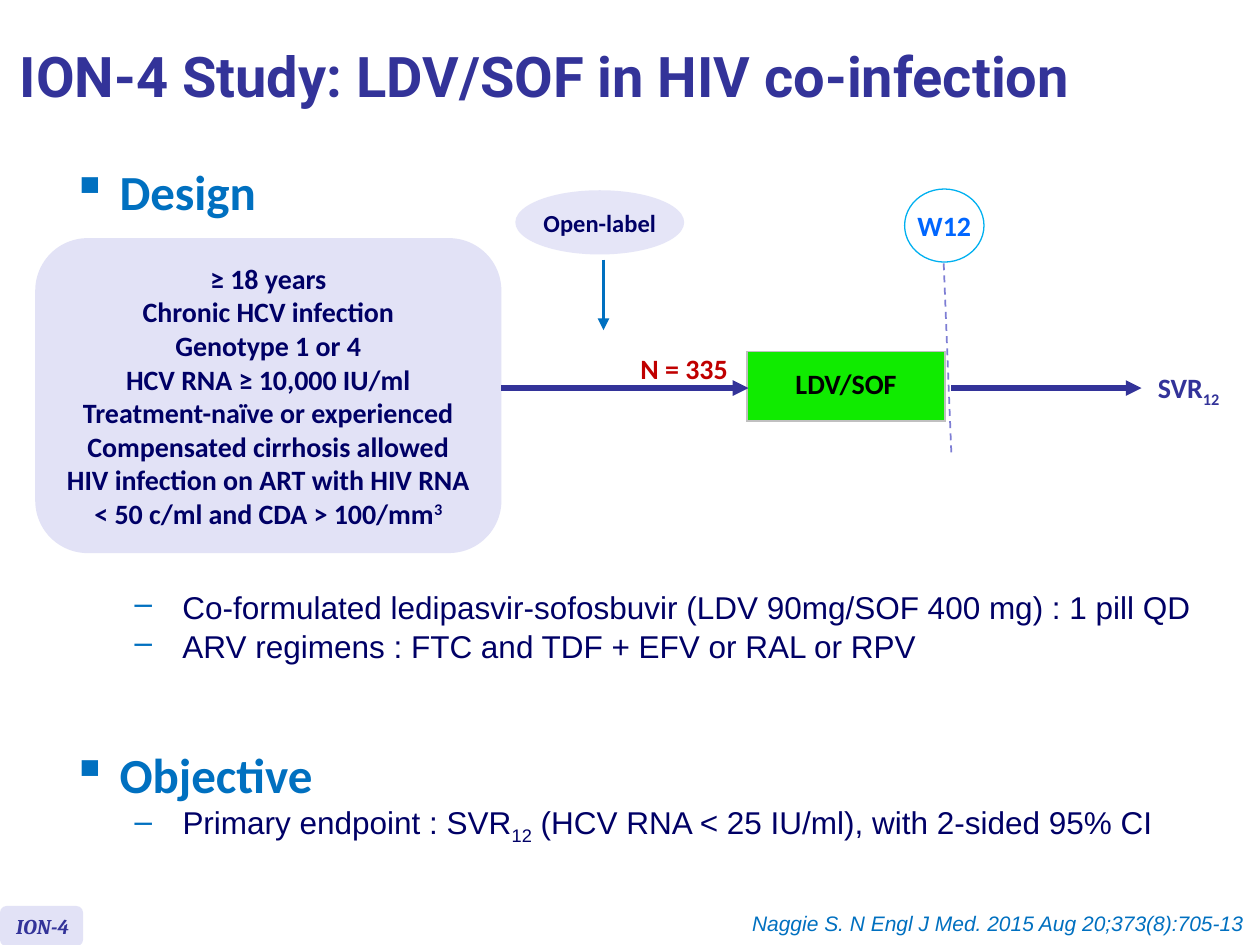
from lxml import etree
from pptx import Presentation
from pptx import util as u
from pptx.dml.color import RGBColor
from pptx.enum import dml, shapes, text
from pptx.oxml import parse_xml
from pptx.oxml.ns import nsdecls, qn

# Content: a paragraph is a list of (text, baseline shift in %) runs
TITLE = "ION-4 Study: LDV/SOF in HIV co-infection"
BADGE = "ION-4"
CITATION = "Naggie S. N Engl J Med. 2015 Aug 20;373(8):705-13"
CRITERIA = [
    "≥ 18 years",
    "Chronic HCV infection",
    "Genotype 1 or 4",
    "HCV RNA ≥ 10,000 IU/ml",
    "Treatment-naïve or experienced",
    "Compensated cirrhosis allowed",
    [("HIV infection on ART with HIV RNA < 50 c/ml and CDA > 100/mm", 0), ("3", 30)],
]
REGIMENS = [
    "Co-formulated ledipasvir-sofosbuvir (LDV 90mg/SOF 400 mg) : 1 pill QD",
    "ARV regimens : FTC and TDF + EFV or RAL or RPV",
]
ENDPOINT = [("Primary endpoint : SVR", 0), ("12", -25),
            (" (HCV RNA < 25 IU/ml), with 2-sided 95% CI", 0)]
OUTCOME = [("SVR", 0), ("12", -25)]

INDIGO, NAVY, BLUE, LILAC = "333399", "000066", "0070C0", "E2E2F6"
LEFT, CENTER, RIGHT = text.PP_ALIGN.LEFT, text.PP_ALIGN.CENTER, text.PP_ALIGN.RIGHT
HEADING = dict(size=28, color=BLUE, bullet="▪", indent=0.38)
DETAIL = dict(size=18, color=NAVY, font="Arial", bold=False, bullet="–")

prs = Presentation()
prs.slide_width, prs.slide_height = u.Inches(10), u.Inches(7.5)
slide = prs.slides.add_slide(prs.slide_layouts[6])


def rgb(color):
    return RGBColor.from_string(color)


def inches(*lengths):
    return [u.Inches(n) for n in lengths]


def write(paragraph, runs, size, color, font="Calibri", bold=True, italic=False,
          align=LEFT, bullet=None, indent=0.0, before=0):
    if bullet:
        props = paragraph._p.get_or_add_pPr()
        props.set("marL", str(u.Inches(indent)))
        props.set("indent", str(-u.Inches(0.38)))
        props.append(parse_xml(f'<a:buClr {nsdecls("a")}><a:srgbClr val="{BLUE}"/></a:buClr>'))
        props.append(parse_xml(f'<a:buChar {nsdecls("a")} char="{bullet}"/>'))
    paragraph.alignment = align
    if before:
        paragraph.space_before = u.Pt(before)
    for words, baseline in [(runs, 0)] if isinstance(runs, str) else runs:
        run = paragraph.add_run()
        run.text = words
        run.font.name, run.font.size = font, u.Pt(size)
        run.font.bold, run.font.italic = bold, italic
        run.font.color.rgb = rgb(color)
        if baseline:
            run._r.get_or_add_rPr().set("baseline", str(baseline * 1000))


def fill_frame(frame, lines, wrap=True, anchor=text.MSO_ANCHOR.TOP):
    """Each line is (runs, style)."""
    frame.word_wrap, frame.vertical_anchor = wrap, anchor
    for i, (runs, style) in enumerate(lines):
        write(frame.add_paragraph() if i else frame.paragraphs[0], runs, **style)
    return frame


def label(box, lines, **options):
    return fill_frame(slide.shapes.add_textbox(*inches(*box)).text_frame, lines, **options)


def panel(kind, box, fill, lines=(), line=None, wrap=True):
    shape = slide.shapes.add_shape(kind, *inches(*box))
    shape.shadow.inherit = False
    shape.fill.solid()
    shape.fill.fore_color.rgb = rgb(fill)
    if line:
        shape.line.color.rgb, shape.line.width = rgb(line), u.Pt(0.75)
    else:
        shape.line.fill.background()
    fill_frame(shape.text_frame, lines, wrap, text.MSO_ANCHOR.MIDDLE)
    return shape


def connect(start, end, color, width, arrow=True):
    line = slide.shapes.add_connector(shapes.MSO_CONNECTOR.STRAIGHT, *inches(*start, *end))
    line.line.color.rgb, line.line.width = rgb(color), u.Pt(width)
    if arrow:
        etree.SubElement(line.line._get_or_add_ln(), qn("a:tailEnd"), type="triangle")
    else:
        line.line.dash_style = dml.MSO_LINE.DASH
    etree.SubElement(line._element.spPr, qn("a:effectLst"))


ROUND, OVAL = shapes.MSO_SHAPE.ROUNDED_RECTANGLE, shapes.MSO_SHAPE.OVAL
FLOW_Y = 3.08      # height of the study's time line
WEEK_12 = 7.55     # end of treatment

# Title, badge and citation
label((0.06, 0.03, 9.83, 1.21), [(TITLE, dict(size=32, color=INDIGO, font="Roboto"))],
      anchor=text.MSO_ANCHOR.MIDDLE).paragraphs[0].line_spacing = 0.85
panel(ROUND, (0, 7.19, 0.66, 0.32), LILAC)
label((0.03, 7.2, 0.81, 0.3),
      [(BADGE, dict(size=12, color=INDIGO, font="Cambria", italic=True))])
label((5.79, 7.18, 4.18, 0.3),
      [(CITATION, dict(size=12, color=BLUE, font="Arial", bold=False, italic=True, align=RIGHT))])

# Design: heading and entry criteria
label((0.47, 1.23, 1.98, 0.63), [("Design", HEADING)])
centred = dict(size=16, color=NAVY, align=CENTER)
panel(ROUND, (0.28, 1.89, 3.7, 2.5), LILAC, [(line, centred) for line in CRITERIA])

# Treatment arm
arm = slide.shapes.add_table(1, 1, *inches(5.93, 2.79, 1.57, 0.55)).table
arm.first_row = arm.horz_banding = False
cell = arm.cell(0, 0)
fill_frame(cell.text_frame, [("LDV/SOF", dict(size=16, color="000000", align=CENTER))])
cell.text_frame.paragraphs[0].line_spacing = 0.8
cell.vertical_anchor = text.MSO_ANCHOR.MIDDLE
for side in ("lnL", "lnR", "lnT", "lnB"):
    cell._tc.get_or_add_tcPr().append(parse_xml(
        f'<a:{side} {nsdecls("a")} w="12700"><a:solidFill><a:srgbClr val="C0C0C0"/>'
        f'</a:solidFill></a:{side}>'))
cell.fill.solid()
cell.fill.fore_color.rgb = rgb("10EB00")

# Markers above the time line
open_label = panel(OVAL, (4.09, 1.51, 1.34, 0.51), "E5E5F7",
                   [("Open-label", dict(centred, size=14))], wrap=False).text_frame
open_label.margin_left = open_label.margin_right = 0
open_label.margin_top = open_label.margin_bottom = 0
connect((4.79, 2.06), (4.79, 2.62), BLUE, 2.25)
connect((7.49, 2.09), (WEEK_12, 3.59), "7E7ED4", 1, arrow=False)
panel(OVAL, (7.18, 1.5, 0.63, 0.58), "FFFFFF",
      [("W12", dict(centred, color="0066FF"))], line="00B0F0", wrap=False)

# Time line and its labels
for start, end in [(3.98, 5.94), (WEEK_12, 9.06)]:
    connect((start, FLOW_Y), (end, FLOW_Y), INDIGO, 3)
label((4.98, 2.74, 0.9, 0.37), [("N = 335", dict(centred, color="C00000"))], wrap=False)
label((9.09, 2.89, 0.72, 0.37), [(OUTCOME, dict(size=16, color=INDIGO))], wrap=False)

# Regimens and objective
label((0.97, 4.62, 8.83, 0.72),
      [(line, dict(DETAIL, indent=0.38, before=0.7 if i else 0))
       for i, line in enumerate(REGIMENS)])
label((0.47, 5.86, 9.02, 1.2),
      [("Objective", HEADING), (ENDPOINT, dict(DETAIL, indent=0.88))]).paragraphs[1].level = 1

prs.save("out.pptx")
